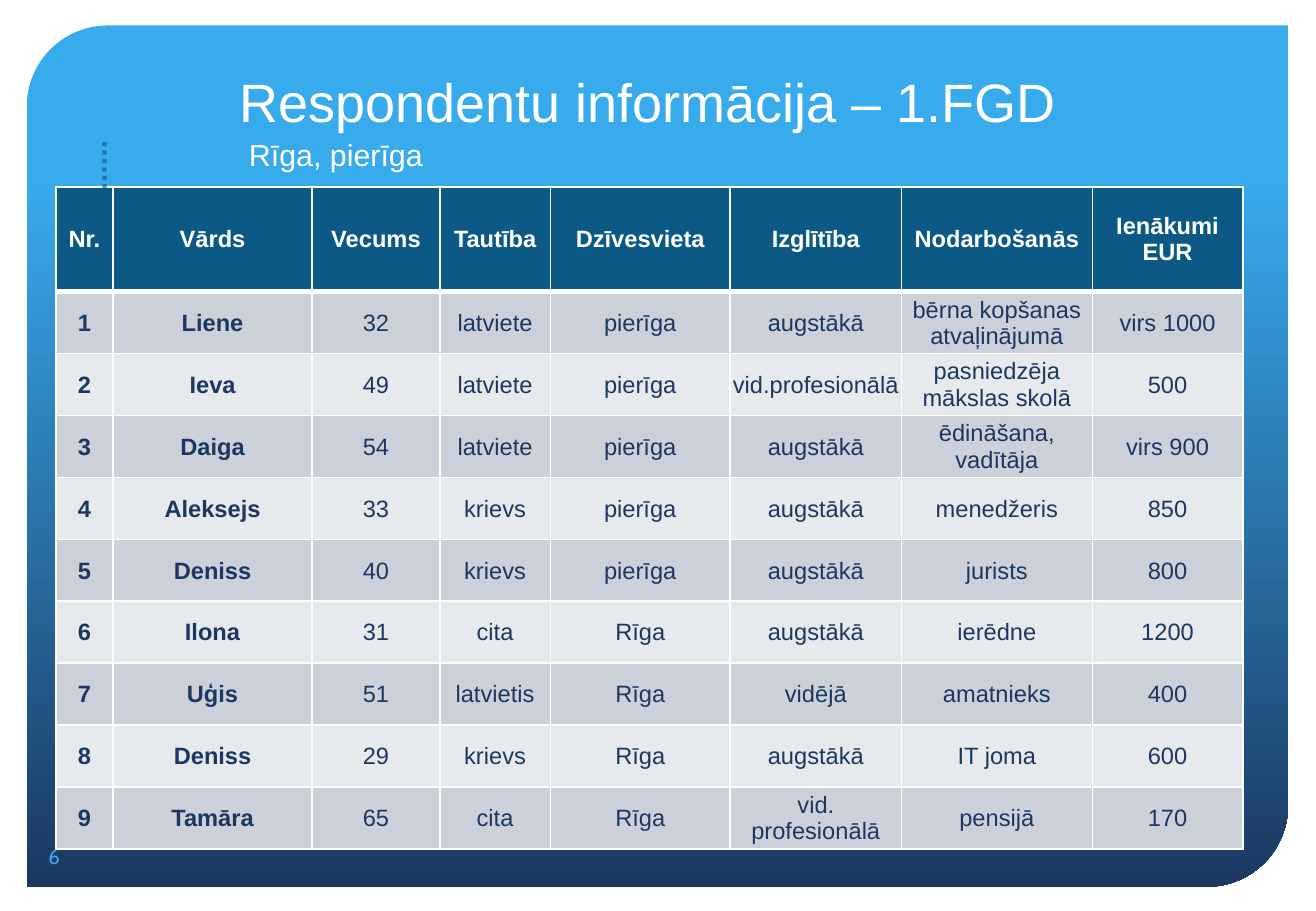
from lxml import etree
from pptx import Presentation
from pptx import util as u
from pptx.dml.color import RGBColor
from pptx.enum import dml, shapes, text
from pptx.oxml.ns import qn

WHITE, NAVY, SKY, TEAL = "FFFFFF", "1B3861", "38ABED", "0C5986"
BANDS = ["CCD1D9", "E7EAED"]
WIDTHS = [0.47, 1.64, 1.05, 0.91, 1.48, 1.41, 1.57, 1.24]
HEAD_HIGH, ROW_HIGH = 0.86, 0.51
ROWS = [
    ["Nr.", "Vārds", "Vecums", "Tautība", "Dzīvesvieta", "Izglītība", "Nodarbošanās", "Ienākumi EUR"],
    ["1", "Liene", "32", "latviete", "pierīga", "augstākā", "bērna kopšanas atvaļinājumā", "virs 1000"],
    ["2", "Ieva", "49", "latviete", "pierīga", "vid.profesionālā", "pasniedzēja mākslas skolā", "500"],
    ["3", "Daiga", "54", "latviete", "pierīga", "augstākā", "ēdināšana, vadītāja", "virs 900"],
    ["4", "Aleksejs", "33", "krievs", "pierīga", "augstākā", "menedžeris", "850"],
    ["5", "Deniss", "40", "krievs", "pierīga", "augstākā", "jurists", "800"],
    ["6", "Ilona", "31", "cita", "Rīga", "augstākā", "ierēdne", "1200"],
    ["7", "Uģis", "51", "latvietis", "Rīga", "vidējā", "amatnieks", "400"],
    ["8", "Deniss", "29", "krievs", "Rīga", "augstākā", "IT joma", "600"],
    ["9", "Tamāra", "65", "cita", "Rīga", "vid. profesionālā", "pensijā", "170"],
]


def color(code):
    return RGBColor.from_string(code)


class Deck:
    font = "Arial"

    def __init__(self, wide, high):
        self.show = Presentation()
        self.show.slide_width = u.Inches(wide)
        self.show.slide_height = u.Inches(high)
        self.slide = self.show.slides.add_slide(self.show.slide_layouts[5])

    def words(self, frame, words, size, ink, bold=False, align=text.PP_ALIGN.LEFT, font=None):
        frame.text = words
        para = frame.paragraphs[0]
        para.alignment = align
        for run in para.runs:
            run.font.name = font or self.font
            run.font.size = u.Pt(size)
            run.font.bold = bold
            run.font.color.rgb = color(ink)

    def panel(self, left, top, wide, high, curve, stops):
        box = self.slide.shapes.add_shape(
            shapes.MSO_SHAPE.ROUND_2_DIAG_RECTANGLE, *map(u.Inches, (left, top, wide, high)))
        box.adjustments[0], box.adjustments[1] = curve, 0
        box.shadow.inherit = False
        box.line.fill.background()
        box.fill.gradient()
        box.fill.gradient_angle = 270
        for stop, (place, code) in zip(box.fill.gradient_stops, stops):
            stop.position = place
            stop.color.rgb = color(code)
        self.slide.shapes.title._element.addprevious(box._element)

    def title(self, left, top, wide, high, words, size, ink):
        head = self.slide.shapes.title
        head.left, head.top, head.width, head.height = map(u.Inches, (left, top, wide, high))
        head.text_frame.vertical_anchor = text.MSO_ANCHOR.BOTTOM
        self.words(head.text_frame, words, size, ink)

    def label(self, left, top, wide, high, words, size, ink, wrap=True, font=None):
        box = self.slide.shapes.add_textbox(*map(u.Inches, (left, top, wide, high)))
        box.text_frame.word_wrap = wrap
        self.words(box.text_frame, words, size, ink, font=font)

    def dots(self, x, top, end, ink, width, alpha):
        line = self.slide.shapes.add_connector(
            shapes.MSO_CONNECTOR.STRAIGHT, *map(u.Inches, (x, top, x, end)))
        line.line.color.rgb = color(ink)
        line.line.width = u.Pt(width)
        line.line.dash_style = dml.MSO_LINE.ROUND_DOT
        tint = line._element.spPr.find(".//" + qn("a:srgbClr"))
        etree.SubElement(tint, qn("a:alpha"), val=str(alpha * 1000))
        etree.SubElement(line._element.spPr, qn("a:effectLst"))

    def edges(self, cell, top, base):
        props = cell._tc.get_or_add_tcPr()
        for side, width in zip("LRTB", (1, 1, top, base)):
            edge = etree.SubElement(props, qn("a:ln" + side), w=str(u.Pt(width)))
            fill = etree.SubElement(edge, qn("a:solidFill"))
            etree.SubElement(fill, qn("a:srgbClr"), val=WHITE)

    def table(self, left, top, widths, rows):
        highs = [HEAD_HIGH] + [ROW_HIGH] * (len(rows) - 1)
        grid = self.slide.shapes.add_table(
            len(rows), len(widths),
            *map(u.Inches, (left, top, sum(widths), sum(highs)))).table
        grid.horz_banding = False
        for col, wide in zip(grid.columns, widths):
            col.width = u.Inches(wide)
        for r, (row, high) in enumerate(zip(rows, highs)):
            grid.rows[r].height = u.Inches(high)
            for c, words in enumerate(row):
                self.cell(grid.cell(r, c), words, r, c)

    def cell(self, cell, words, r, c):
        head = r == 0
        self.edges(cell, 3 if r == 1 else 1, 3 if head else 1)
        cell.fill.solid()
        cell.fill.fore_color.rgb = color(TEAL if head else BANDS[(r - 1) % 2])
        cell.vertical_anchor = text.MSO_ANCHOR.MIDDLE
        if not head:
            cell.margin_left = cell.margin_right = cell.margin_top = u.Inches(0.01)
            cell.margin_bottom = 0
        self.words(cell.text_frame, words, 14, WHITE if head else NAVY,
                   head or c < 2, text.PP_ALIGN.CENTER)


def main():
    deck = Deck(10.83, 7.5)
    deck.panel(0.22, 0.21, 10.38, 7.09, 0.094, [(0.17, SKY), (1, NAVY)])
    deck.title(1.87, 0.36, 7.48, 0.79, "Respondentu informācija – 1.FGD", 32, WHITE)
    deck.table(0.46, 1.54, WIDTHS, ROWS)
    deck.label(1.95, 1.07, 1.65, 0.4, "Rīga, pierīga", 18, WHITE, wrap=False)
    deck.dots(0.86, 1.17, 1.58, TEAL, 2.5, 62)
    deck.label(0.3, 6.9, 0.58, 0.4, "6", 12, SKY, font="Cabin")
    deck.show.save("out.pptx")


if __name__ == "__main__":
    main()
